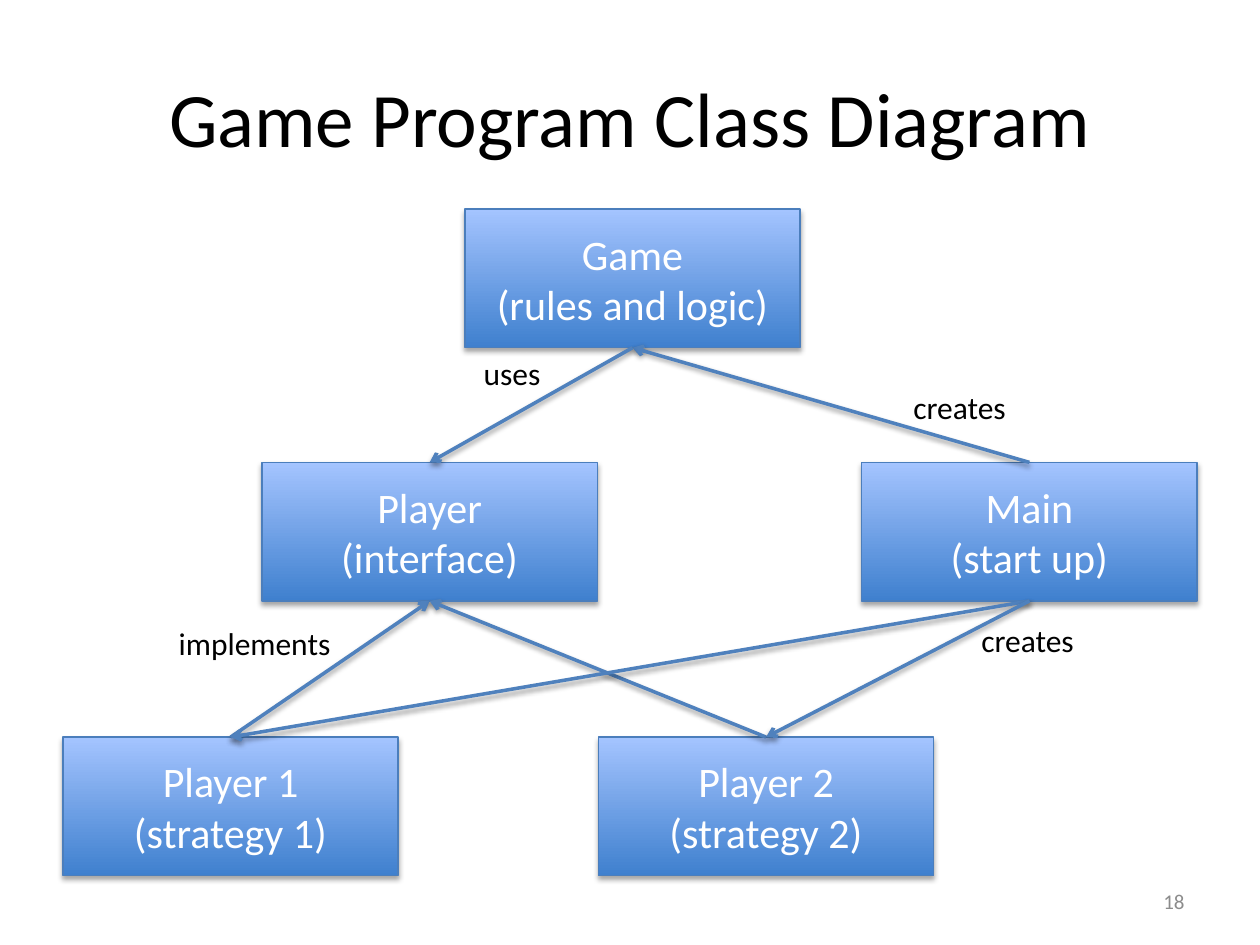
from lxml import etree
from pptx import Presentation
from pptx.dml.color import RGBColor
from pptx.enum.shapes import MSO_CONNECTOR, MSO_SHAPE
from pptx.enum.text import MSO_ANCHOR, MSO_AUTO_SIZE, PP_ALIGN
from pptx.oxml.ns import qn
from pptx.util import Inches, Pt

PROCESS = MSO_SHAPE.FLOWCHART_PROCESS
STRAIGHT = MSO_CONNECTOR.STRAIGHT
LEFT, CENTER, RIGHT = PP_ALIGN.LEFT, PP_ALIGN.CENTER, PP_ALIGN.RIGHT
TOP, MIDDLE = MSO_ANCHOR.TOP, MSO_ANCHOR.MIDDLE
FIT_SHAPE = MSO_AUTO_SIZE.SHAPE_TO_FIT_TEXT

BLACK = RGBColor(0x00, 0x00, 0x00)
WHITE = RGBColor(0xFF, 0xFF, 0xFF)
GRAY = RGBColor(0x8C, 0x8C, 0x8C)
BOX_BOTTOM = RGBColor(0x3F, 0x80, 0xCE)
BOX_TOP = RGBColor(0xA4, 0xC4, 0xFF)
BOX_LINE = RGBColor(0x4B, 0x7E, 0xBC)
ARROW_BLUE = RGBColor(0x4F, 0x81, 0xBD)

FONT = "Calibri"
MARGIN = 0.5
BOX_WIDTH, BOX_HEIGHT = 2.66, 1.1
ROW_TOPS = (1.66, 3.67, 5.85)
LABEL_HEIGHT = 0.4
TOP_SIDE, BOTTOM_SIDE = 0, 2

# name: (left, row, text); "\v" breaks a line, "\n" starts a paragraph
CLASSES = {
    "player": (2.08, 1, "Player\v(interface)"),
    "player 1": (MARGIN, 2, "Player 1\n(strategy 1)"),
    "player 2": (4.75, 2, "Player 2\n(strategy 2)"),
    "main": (10 - MARGIN - BOX_WIDTH, 1, "Main\n(start up)"),
    "game": (3.69, 0, "Game\n(rules and logic)"),
}
# source, side, target, side
RELATIONS = (
    ("player 1", TOP_SIDE, "player", BOTTOM_SIDE),
    ("player 2", TOP_SIDE, "player", BOTTOM_SIDE),
    ("main", TOP_SIDE, "game", BOTTOM_SIDE),
    ("main", BOTTOM_SIDE, "player 1", TOP_SIDE),
    ("main", BOTTOM_SIDE, "player 2", TOP_SIDE),
    ("game", BOTTOM_SIDE, "player", TOP_SIDE),
)
# text, left, top, width
LABELS = (
    ("creates", 7.69, 4.88, 0.95),
    ("creates", 7.15, 3.03, 0.95),
    ("implements", 1.32, 4.9, 1.42),
    ("uses", 3.74, 2.76, 0.66),
)


def write_text(shape, text, size, color=BLACK, align=LEFT, anchor=TOP, wrap=True):
    frame = shape.text_frame
    frame.text = text
    frame.word_wrap = wrap
    frame.vertical_anchor = anchor
    for para in frame.paragraphs:
        para.alignment = align
        for span in para.runs:
            span.font.name = FONT
            span.font.size = Pt(size)
            span.font.color.rgb = color


def add_shadow(shape, distance, opacity):
    """Cast a soft black shadow straight down; call after the line is set."""
    properties = shape._element.spPr
    effects = etree.SubElement(properties, qn("a:effectLst"))
    shadow = etree.SubElement(
        effects, qn("a:outerShdw"), blurRad=str(Pt(3.1)), dist=str(Pt(distance)),
        dir=str(90 * 60000), rotWithShape="0")
    black = etree.SubElement(shadow, qn("a:srgbClr"), val=str(BLACK))
    etree.SubElement(black, qn("a:alpha"), val=str(opacity * 1000))


def add_class_box(page, left, row, text):
    box = page.shapes.add_shape(
        PROCESS, Inches(left), Inches(ROW_TOPS[row]), Inches(BOX_WIDTH), Inches(BOX_HEIGHT))
    box.fill.gradient()
    box.fill.gradient_angle = 90
    for stop, color in zip(box.fill.gradient_stops, (BOX_BOTTOM, BOX_TOP)):
        stop.color.rgb = color
    box.line.color.rgb = BOX_LINE
    box.line.width = Pt(0.75)
    add_shadow(box, distance=1.8, opacity=35)
    write_text(box, text, 24, color=WHITE, align=CENTER, anchor=MIDDLE)
    return box


def add_relation(page, source, source_side, target, target_side):
    arrow = page.shapes.add_connector(STRAIGHT, 0, 0, 0, 0)
    arrow.begin_connect(source, source_side)
    arrow.end_connect(target, target_side)
    arrow.line.color.rgb = ARROW_BLUE
    arrow.line.width = Pt(2)
    etree.SubElement(arrow.line._get_or_add_ln(), qn("a:tailEnd"), type="arrow")
    add_shadow(arrow, distance=1.6, opacity=38)


def add_text_box(page, text, left, top, width, size, **text_format):
    box = page.shapes.add_textbox(
        Inches(left), Inches(top), Inches(width), Inches(LABEL_HEIGHT))
    write_text(box, text, size, **text_format)
    return box


def add_title(page, text):
    title = page.shapes.title
    title.left, title.top = Inches(MARGIN), Inches(0.3)
    title.width, title.height = Inches(9), Inches(1.25)
    write_text(title, text, 44, align=CENTER, anchor=MIDDLE)


def main():
    deck = Presentation()
    deck.slide_width, deck.slide_height = Inches(10), Inches(7.5)
    page = deck.slides.add_slide(deck.slide_layouts.get_by_name("Title Only"))

    add_title(page, "Game Program Class Diagram")
    add_text_box(page, "18", 7.17, 6.95, 2.33, 12, color=GRAY, align=RIGHT, anchor=MIDDLE)
    boxes = {name: add_class_box(page, *place) for name, place in CLASSES.items()}
    for source, source_side, target, target_side in RELATIONS:
        add_relation(page, boxes[source], source_side, boxes[target], target_side)
    for text, left, top, width in LABELS:
        label = add_text_box(page, text, left, top, width, 18, wrap=False)
        label.text_frame.auto_size = FIT_SHAPE

    deck.save("out.pptx")


if __name__ == "__main__":
    main()
